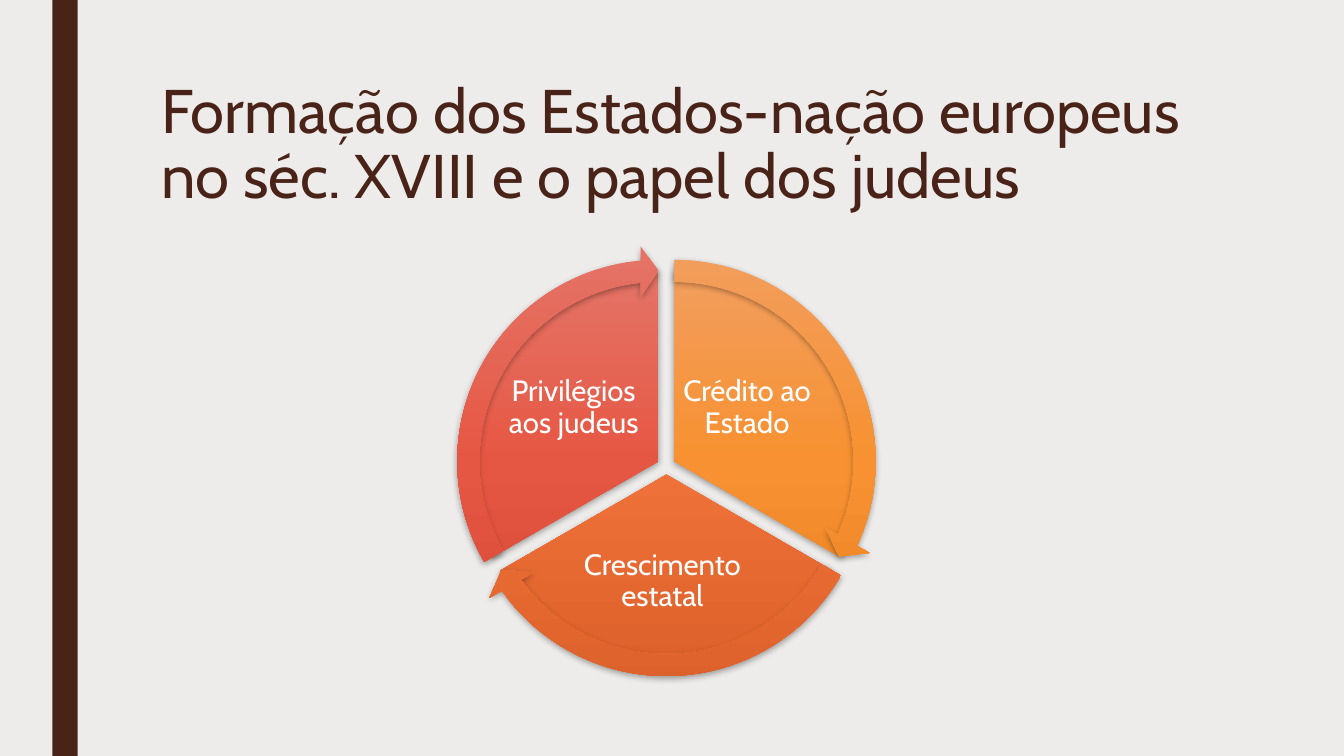
import math

import lxml.etree
import pptx
import pptx.dml.color
import pptx.enum.shapes
import pptx.enum.text
import pptx.oxml.ns
import pptx.util

Inches = pptx.util.Inches
Pt = pptx.util.Pt
RGBColor = pptx.dml.color.RGBColor
MSO_SHAPE = pptx.enum.shapes.MSO_SHAPE
MSO_ANCHOR = pptx.enum.text.MSO_ANCHOR
PP_ALIGN = pptx.enum.text.PP_ALIGN
qn = pptx.oxml.ns.qn

BACKGROUND = RGBColor(0xED, 0xEC, 0xEB)
BROWN = RGBColor(0x4A, 0x23, 0x18)
WHITE = RGBColor(0xFF, 0xFF, 0xFF)
BLACK = RGBColor(0x00, 0x00, 0x00)
AMBER = (RGBColor(0xF2, 0x9E, 0x5E), RGBColor(0xF7, 0x91, 0x31), RGBColor(0xE6, 0x80, 0x22))
ORANGE = (RGBColor(0xEB, 0x86, 0x62), RGBColor(0xEF, 0x71, 0x3A), RGBColor(0xDD, 0x61, 0x2A))
RED = (RGBColor(0xE4, 0x74, 0x67), RGBColor(0xE6, 0x57, 0x43), RGBColor(0xD5, 0x48, 0x33))
FONT = "Cabin"

TITLE = "Formação dos Estados-nação europeus no séc. XVIII e o papel dos judeus"
STAGES = [
    ("Crédito ao Estado", AMBER, -30, (162, 18), (14.725, 161.994), (2.18, 0.81, 1.36, 1.13)),
    ("Crescimento estatal", ORANGE, 90, (18, 90), (86.72, 18.005), (1, 2.6, 2.04, 1)),
    ("Privilégios aos judeus", RED, 210, (90, 162), (158.73, 90), (0.46, 0.81, 1.36, 1.13)),
]


def add_xml(parent, tag, **attributes):
    return lxml.etree.SubElement(parent, qn(tag), **attributes)


def add_gradient(shape, colors):
    shape.fill.gradient()
    gradient = shape._element.spPr.find(qn("a:gradFill"))
    for child in list(gradient):
        gradient.remove(child)
    stops = add_xml(gradient, "a:gsLst")
    for position, color in zip((0, 50000, 100000), colors):
        stop = add_xml(stops, "a:gs", pos=str(position))
        add_xml(stop, "a:srgbClr", val=str(color))
    add_xml(gradient, "a:lin", ang="5400000", scaled="0")


def add_shadow(shape):
    shape.shadow.inherit = False
    effects = shape._element.spPr.find(qn("a:effectLst"))
    shadow = add_xml(effects, "a:outerShdw", blurRad=str(Pt(4.5)), dist=str(Pt(1.5)),
                     dir="5400000", rotWithShape="0")
    color = add_xml(shadow, "a:srgbClr", val=str(BLACK))
    add_xml(color, "a:alpha", val="35000")


def add_text(slide, box, text, size, color, spacing, align, anchor, margins):
    frame = slide.shapes.add_textbox(*map(Inches, box)).text_frame
    frame.word_wrap = True
    frame.vertical_anchor = anchor
    frame.margin_left, frame.margin_top, frame.margin_right, frame.margin_bottom = map(Inches, margins)
    paragraph = frame.paragraphs[0]
    paragraph.alignment = align
    paragraph.line_spacing = spacing
    run = paragraph.add_run()
    run.text = text
    run.font.name = FONT
    run.font.size = Pt(size)
    run.font.color.rgb = color


def add_cycle_part(slide, kind, center, diameter, adjustments, colors):
    left, top = (coordinate - diameter / 2 for coordinate in center)
    part = slide.shapes.add_shape(kind, *map(Inches, (left, top, diameter, diameter)))
    for index, value in enumerate(adjustments):
        part.adjustments[index] = value
    add_gradient(part, colors)
    part.line.fill.background()
    add_shadow(part)


def add_side_band(slide, box):
    band = slide.shapes.add_shape(MSO_SHAPE.RECTANGLE, *map(Inches, box))
    band.fill.solid()
    band.fill.fore_color.rgb = BROWN
    band.line.fill.background()
    band.shadow.inherit = False


def add_title(slide, box):
    add_text(slide, box, TITLE, 44, BROWN, 0.89, PP_ALIGN.LEFT, MSO_ANCHOR.TOP,
             (0.1, 0.05, 0.1, 0.05))


def add_cycle(slide, box):
    left, top, width, height = box
    pie_diameter = width - 0.32
    arrow_diameter = pie_diameter + 0.48
    gap = 0.09

    def center_of(angle):
        turn = math.radians(angle)
        return (left + width / 2 + gap * math.cos(turn), top + height / 2 + gap * math.sin(turn))

    for label, colors, angle, slice_angles, _, (x, y, w, h) in STAGES:
        add_cycle_part(slide, MSO_SHAPE.PIE, center_of(angle), pie_diameter, slice_angles, colors)
        add_text(slide, (left + x, top + y, w, h), label, 21, WHITE, 0.9, PP_ALIGN.CENTER,
                 MSO_ANCHOR.MIDDLE, (0.03,) * 4)
    for _, colors, angle, _, arrow_angles, _ in STAGES:
        add_cycle_part(slide, MSO_SHAPE.CIRCULAR_ARROW, center_of(angle), arrow_diameter,
                       (0.051, 3.275, *arrow_angles, 0.059), colors)


def main():
    presentation = pptx.Presentation()
    presentation.slide_width = Inches(13.33)
    presentation.slide_height = Inches(7.5)
    slide = presentation.slides.add_slide(presentation.slide_layouts[6])
    slide.background.fill.solid()
    slide.background.fill.fore_color.rgb = BACKGROUND
    add_side_band(slide, (0.52, 0, 0.25, 7.5))
    add_title(slide, (1.5, 0.75, 10.5, 1.62))
    add_cycle(slide, (4.55, 2.67, 4.12, 3.9))
    presentation.save("out.pptx")


if __name__ == "__main__":
    main()
